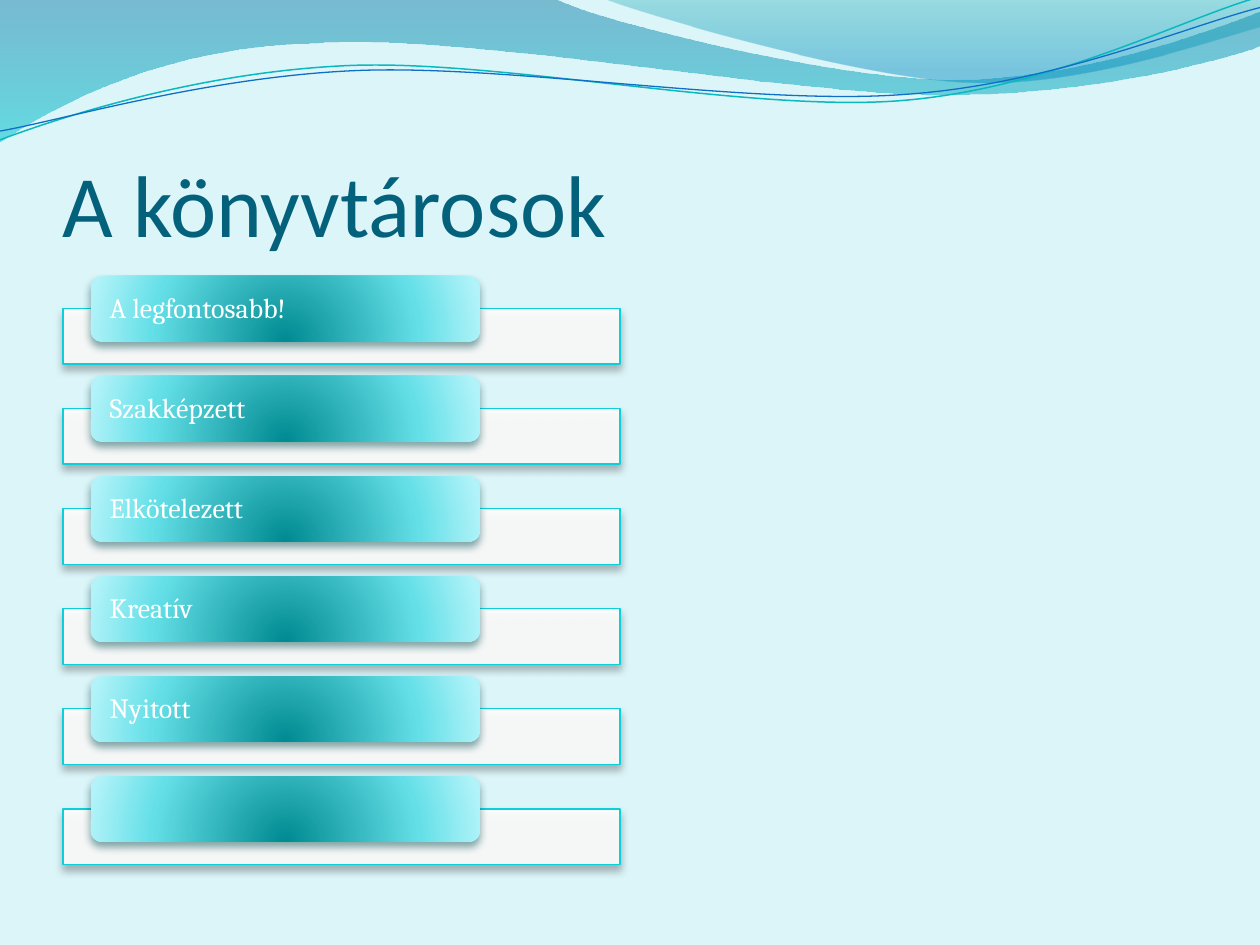
from math import cos, radians, sin

from lxml.etree import SubElement
from pptx import Presentation
from pptx.dml.color import RGBColor
from pptx.enum.shapes import MSO_SHAPE
from pptx.enum.text import MSO_ANCHOR
from pptx.oxml import parse_xml
from pptx.oxml.ns import nsdecls, qn
from pptx.util import Inches, Pt

BACKGROUND = RGBColor(0xDB, 0xF5, 0xF9)
TITLE_COLOR = RGBColor(0x04, 0x61, 0x7B)
WHITE = RGBColor(0xFF, 0xFF, 0xFF)
BAR_LINE = RGBColor(0x0B, 0xD0, 0xD9)
BAR_SHADOW = RGBColor(0x5A, 0x5A, 0x5A)
LABEL_SHADOW = RGBColor(0x02, 0x4B, 0x4E)
TEAL_LINE = RGBColor(0x0A, 0xB8, 0xBF)
BLUE_LINE = RGBColor(0x0F, 0x6F, 0xC6)
WAVE_BLUE = RGBColor(0x00, 0x74, 0xA1)
WAVE_CYAN = RGBColor(0x00, 0xC6, 0xCF)
CREST_TEAL = RGBColor(0x00, 0xA1, 0xA9)
CREST_BLUE = RGBColor(0x00, 0x8B, 0xBF)
LABEL_DARK = RGBColor(0x00, 0x8A, 0x91)
LABEL_MID = RGBColor(0x64, 0xDF, 0xE7)
LABEL_LIGHT = RGBColor(0xB1, 0xF3, 0xF9)

DOWNWARD = '<a:lin ang="5400000" scaled="0"/>'
RADIAL = ('<a:path path="circle"><a:fillToRect l="50000" t="130000" '
          'r="50000" b="-30000"/></a:path>')


def add_curve(shapes, start, segments, close):
    """Draw a path in inches; a segment is a line end (2 numbers) or a Bezier (6)."""
    points = [(Inches(segment[i]), Inches(segment[i + 1]))
              for segment in segments for i in range(0, len(segment), 2)]
    builder = shapes.build_freeform(Inches(start[0]), Inches(start[1]))
    builder.add_line_segments(points, close=close)
    shape = builder.convert_to_shape()
    shape.shadow.inherit = False
    outline = next(shape._element.iter(qn("a:path")))
    lines = iter(outline.findall(qn("a:lnTo")))
    for segment in segments:
        line = next(lines)
        if len(segment) == 6:
            bezier = SubElement(outline, qn("a:cubicBezTo"))
            outline.replace(line, bezier)
            bezier.append(line[0])
            for _ in range(2):
                control = next(lines)
                bezier.append(control[0])
                outline.remove(control)
    return shape


def set_gradient(shape, stops, direction):
    """Fill with stops of (position %, colour, opacity %)."""
    stop_xml = "".join(
        f'<a:gs pos="{position * 1000}"><a:srgbClr val="{color}">'
        f'<a:alpha val="{opacity * 1000}"/></a:srgbClr></a:gs>'
        for position, color, opacity in stops)
    gradient = parse_xml(
        f'<a:gradFill {nsdecls("a")} rotWithShape="1">'
        f'<a:gsLst>{stop_xml}</a:gsLst>{direction}</a:gradFill>')
    shape.fill.background()
    properties = shape._element.spPr
    properties.replace(properties.find(qn("a:noFill")), gradient)


presentation = Presentation()
presentation.slide_width = Inches(10)
presentation.slide_height = Inches(7.5)
slide = presentation.slides.add_slide(presentation.slide_layouts[6])
slide.background.fill.solid()
slide.background.fill.fore_color.rgb = BACKGROUND

# Waves along the top
waves = [
    ((0, 0),
     [(4.4, -0.01), (4.76, 0.17, 6.64, 0.63, 7.58, 0.63),
      (8.53, 0.63, 9.58, 0.26, 10, 0.09), (10.01, 0.36),
      (9.83, 0.44, 8.7, 0.76, 7.46, 0.75), (6.22, 0.75, 3.82, 0.28, 2.57, 0.34),
      (1.29, 0.36, 0.46, 0.83, -0.01, 1.13), (0, 0)],
     [(0, WAVE_BLUE, 45), (100, WAVE_CYAN, 55)]),
    ((4.79, -0.01),
     [(5.09, 0.11, 6.82, 0.62, 7.69, 0.65), (8.56, 0.69, 9.61, 0.32, 10, 0.21),
      (10, 0), (4.79, -0.01)],
     [(0, CREST_TEAL, 30), (80, CREST_BLUE, 45)]),
]
for start, segments, stops in waves:
    wave = add_curve(slide.shapes, start, segments, close=True)
    set_gradient(wave, stops, DOWNWARD)
    wave.line.fill.background()

# Thin lines: levelled about their centre, then tilted as shapes
TILT = 2.7
wave_lines = [
    ((0, 1.11),
     [(0.48, 0.93, 1.58, 0.57, 2.77, 0.52), (3.95, 0.47, 5.93, 0.89, 7.13, 0.8),
      (8.33, 0.71, 9.38, 0.15, 9.98, -0.02)],
     (4.99, 0.575), TEAL_LINE, 0.85),
    ((0, 1.04),
     [(0.47, 0.96, 1.64, 0.61, 2.83, 0.56), (4.03, 0.51, 5.97, 0.84, 7.17, 0.75),
      (8.36, 0.67, 9.41, 0.21, 10, 0.06)],
     (4.995, 0.59), BLUE_LINE, 0.75),
]
cosine, sine = cos(radians(TILT)), sin(radians(TILT))
for start, segments, (center_x, center_y), color, width in wave_lines:
    level = []
    for segment in [start, *segments]:
        level_segment = []
        for x, y in zip(segment[::2], segment[1::2]):
            dx, dy = x - center_x, y - center_y
            level_segment += [center_x + dx * cosine - dy * sine,
                              center_y + dx * sine + dy * cosine]
        level.append(level_segment)
    wave_line = add_curve(slide.shapes, level[0], level[1:], close=False)
    wave_line.rotation = 360 - TILT
    wave_line.fill.background()
    wave_line.line.color.rgb = color
    wave_line.line.width = Pt(width)

# Title
title = slide.shapes.add_textbox(Inches(0.5), Inches(0.77), Inches(9), Inches(1.25))
frame = title.text_frame
frame.word_wrap = True
frame.vertical_anchor = MSO_ANCHOR.BOTTOM
frame.margin_left = frame.margin_right = frame.margin_bottom = 0
frame.margin_top = Inches(0.05)
run = frame.paragraphs[0].add_run()
run.text = "A könyvtárosok"
run.font.name = "Calibri"
run.font.size = Pt(50)
run.font.color.rgb = TITLE_COLOR

# Bars with labels; the last label is empty
labels = ["A legfontosabb!", "Szakképzett", "Elkötelezett", "Kreatív", "Nyitott", ""]
ROW_PITCH = 0.794
for row, text in enumerate(labels):
    top = 2.19 + row * ROW_PITCH
    bar = slide.shapes.add_shape(
        MSO_SHAPE.RECTANGLE, Inches(0.5), Inches(top + 0.26), Inches(4.42), Inches(0.44))
    bar.fill.solid()
    bar.fill.fore_color.rgb = WHITE
    bar_color = bar._element.spPr.find(qn("a:solidFill"))[0]
    bar_color.append(parse_xml(f'<a:alpha {nsdecls("a")} val="90000"/>'))
    bar.line.color.rgb = BAR_LINE
    bar.line.width = Pt(0.75)

    label = slide.shapes.add_shape(
        MSO_SHAPE.ROUNDED_RECTANGLE, Inches(0.72), Inches(top), Inches(3.09), Inches(0.52))
    set_gradient(label, [(0, LABEL_DARK, 100), (68, LABEL_MID, 100),
                         (100, LABEL_LIGHT, 100)], RADIAL)
    label.line.fill.background()

    for shape, shadow_color in ((bar, BAR_SHADOW), (label, LABEL_SHADOW)):
        shape.shadow.inherit = False
        shape._element.spPr.find(qn("a:effectLst")).append(parse_xml(
            f'<a:outerShdw {nsdecls("a")} blurRad="{Pt(4.5)}" dist="{Pt(3)}" '
            f'dir="5400000" rotWithShape="0"><a:srgbClr val="{shadow_color}">'
            '<a:alpha val="48000"/></a:srgbClr></a:outerShdw>'))

    if text:
        caption = slide.shapes.add_textbox(
            Inches(0.75), Inches(top + 0.03), Inches(3.04), Inches(0.47))
        frame = caption.text_frame
        frame.word_wrap = True
        frame.vertical_anchor = MSO_ANCHOR.MIDDLE
        frame.margin_left = frame.margin_right = Inches(0.12)
        frame.margin_top = frame.margin_bottom = 0
        paragraph = frame.paragraphs[0]
        paragraph.line_spacing = 0.9
        run = paragraph.add_run()
        run.text = text
        run.font.name = "Cambria"
        run.font.size = Pt(16)
        run.font.color.rgb = WHITE

presentation.save("out.pptx")
